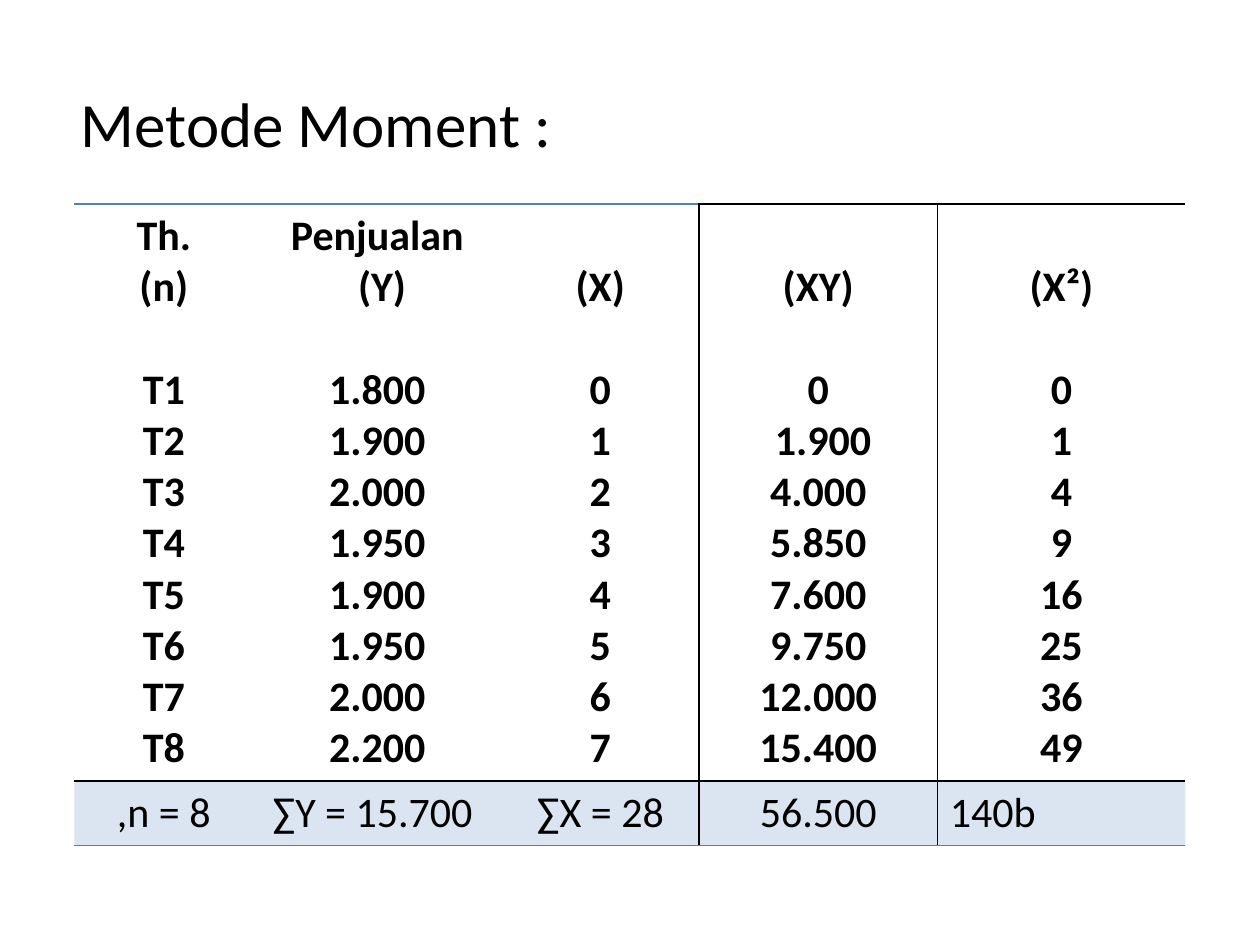
from pptx import Presentation
from pptx.util import Inches, Pt
from pptx.dml.color import RGBColor
from pptx.enum.text import MSO_ANCHOR, PP_ALIGN
from pptx.oxml.ns import qn
from lxml.etree import SubElement

FONT, BLACK, BLUE = "Calibri", "000000", "4F81BD"
LINE = 29.3  # height of one 24 pt text line, in points

# Each column: width, heading lines, values, total
COLUMNS = [
    (1.42, ["Th.", "(n)"], [f"T{n}" for n in range(1, 9)], ",n = 8"),
    (1.97, ["Penjualan", " (Y)"],
     ["1.800", "1.900", "2.000", "1.950", "1.900", "1.950", "2.000", "2.200"],
     "∑Y = 15.700 "),
    (1.57, ["(X)"], [str(x) for x in range(8)], "∑X = 28"),
    (1.89, ["(XY)"],
     ["0", " 1.900", "4.000", "5.850", "7.600", "9.750", "12.000", "15.400"],
     "56.500"),
    (1.97, ["(X²)"], [str(x * x) for x in range(8)], "140b"),
]


def color(hex_text):
    return RGBColor.from_string(hex_text)


def add_text(p, text, size, bold=False, align=PP_ALIGN.CENTER):
    p.alignment = align
    r = p.add_run()
    r.text = text
    r.font.name, r.font.size, r.font.bold = FONT, Pt(size), bold
    r.font.color.rgb = color(BLACK)


def set_borders(cell, **colors):
    """Draw the sides named in colors (L, R, T, B) and hide the others."""
    tc_pr = cell._tc.get_or_add_tcPr()
    for i, side in enumerate("LRTB"):
        ln = tc_pr.makeelement(qn(f"a:ln{side}"), {"w": str(Pt(1))})
        tc_pr.insert(i, ln)
        if colors.get(side):
            fill = SubElement(ln, qn("a:solidFill"))
            SubElement(fill, qn("a:srgbClr"), val=colors[side])
        else:
            SubElement(ln, qn("a:noFill"))


def add_title(slide, left, top, width, height):
    tf = slide.shapes.add_textbox(left, top, width, height).text_frame
    tf.word_wrap = True
    tf.vertical_anchor = MSO_ANCHOR.MIDDLE
    add_text(tf.paragraphs[0], " Metode Moment :", 36, align=PP_ALIGN.LEFT)


def fill_body(cell, heading, values):
    cell.fill.background()
    # Single headings sit on the second line
    cell.margin_top = Inches(0.05) + Pt(LINE) * (2 - len(heading))
    tf = cell.text_frame
    for i, text in enumerate(heading + values):
        p = tf.paragraphs[0] if i == 0 else tf.add_paragraph()
        add_text(p, text, 24, bold=True)
        if i == len(heading):
            p.space_before = Pt(LINE)
    if values[-1] == "49":  # the last square stands a little to the left
        p_pr = p._p.get_or_add_pPr()
        p_pr.set("marL", "0")
        p_pr.set("indent", str(-Inches(0.22)))


def fill_total(cell, text, align):
    cell.fill.solid()
    cell.fill.fore_color.rgb = color(BLUE)
    clr = cell._tc.tcPr.find(qn("a:solidFill"))[0]
    SubElement(clr, qn("a:alpha"), val="20000")
    add_text(cell.text_frame.paragraphs[0], text, 24, align=align)


def add_moment_table(slide, left, top, width, height):
    frame = slide.shapes.add_table(2, len(COLUMNS), left, top, width, height)
    table = frame.table
    table.first_row = table.horz_banding = False
    table.rows[1].height = Inches(0.51)
    table.rows[0].height = height - Inches(0.51)
    last = len(COLUMNS) - 1
    for c, (col_width, heading, values, total) in enumerate(COLUMNS):
        table.columns[c].width = Inches(col_width)
        body, foot = table.cell(0, c), table.cell(1, c)
        fill_body(body, heading, values)
        fill_total(foot, total, PP_ALIGN.LEFT if c == last else PP_ALIGN.CENTER)
        # Only the last two columns are ruled off
        sides = {"L": BLACK if c >= 3 else None,
                 "R": BLACK if c in (2, 3) else None}
        set_borders(body, T=BLACK if c >= 3 else BLUE, B=BLACK, **sides)
        set_borders(foot, T=BLACK, B=BLUE, **sides)


def main():
    prs = Presentation()
    prs.slide_width, prs.slide_height = Inches(10), Inches(7.5)
    slide = prs.slides.add_slide(prs.slide_layouts[6])
    add_title(slide, Inches(0.43), Inches(0.44), Inches(9.13), Inches(1.06))
    add_moment_table(slide, Inches(0.59), Inches(1.62), Inches(8.82), Inches(5.09))
    prs.save("out.pptx")


if __name__ == "__main__":
    main()
